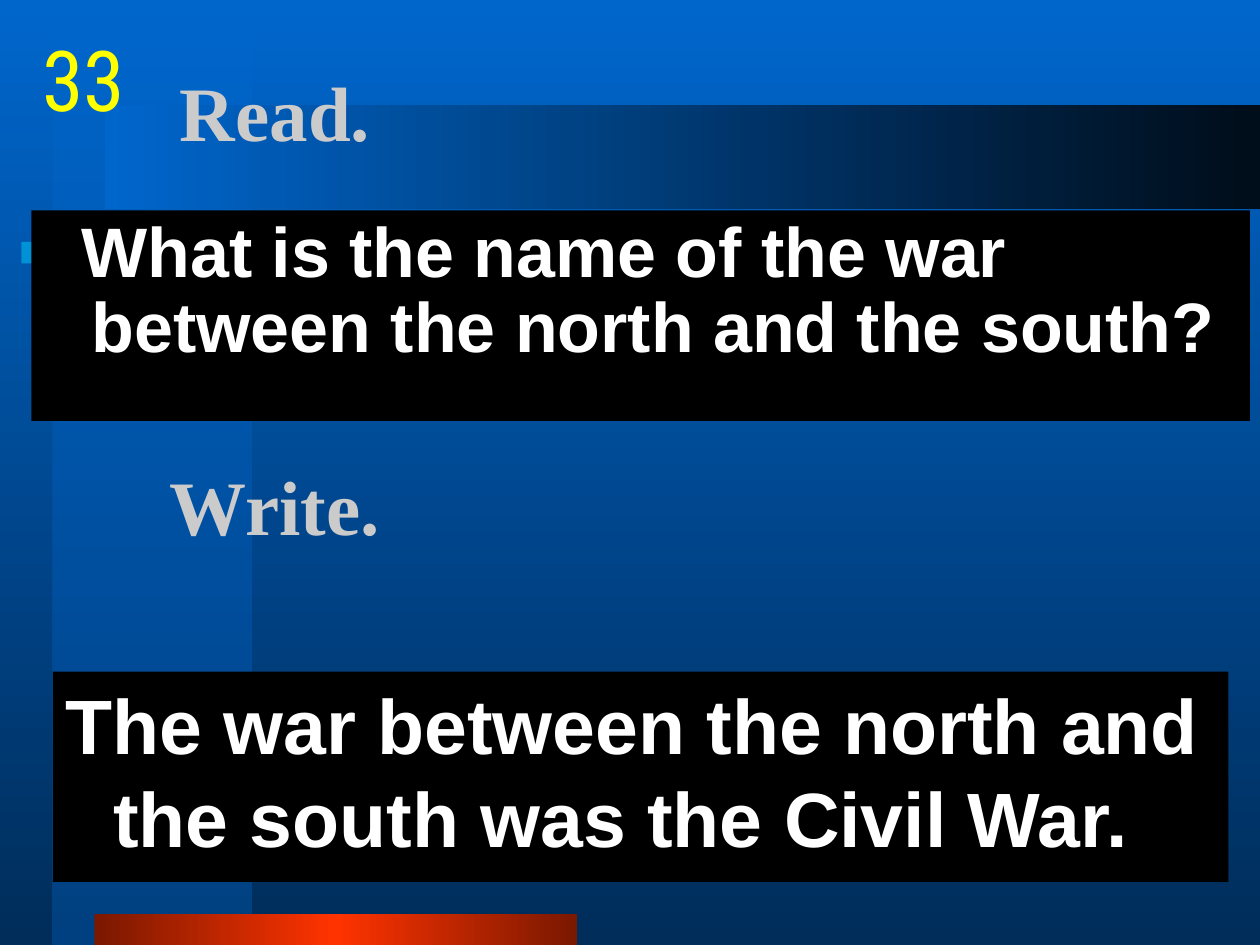
"""Build a read-and-write question slide about the Civil War."""
import pptx
import pptx.dml.color
import pptx.enum.shapes
import pptx.enum.text
import pptx.oxml
import pptx.oxml.ns
import pptx.util

Inches = pptx.util.Inches
Pt = pptx.util.Pt
RGBColor = pptx.dml.color.RGBColor
PP = pptx.enum.text.PP_ALIGN
ANCHOR = pptx.enum.text.MSO_ANCHOR
RECT = pptx.enum.shapes.MSO_SHAPE.RECTANGLE

BLUE = RGBColor(0x00, 0x66, 0xCC)
NAVY = RGBColor(0x00, 0x2D, 0x5A)
MID_BLUE = RGBColor(0x00, 0x53, 0xA6)
NIGHT = RGBColor(0x00, 0x0D, 0x1A)
CYAN = RGBColor(0x00, 0xCC, 0xFF)
RED = RGBColor(0xFF, 0x33, 0x00)
DARK_RED = RGBColor(0x7A, 0x18, 0x00)
BLACK = RGBColor(0x00, 0x00, 0x00)
WHITE = RGBColor(0xFF, 0xFF, 0xFF)
GREY = RGBColor(0xCB, 0xCB, 0xCB)
YELLOW = RGBColor(0xFF, 0xFF, 0x00)


def set_fill(pr, colors, angle=0, alpha=100):
    for tag in ("a:noFill", "a:solidFill", "a:gradFill"):
        for old in pr.findall(pptx.oxml.ns.qn(tag)):
            pr.remove(old)
    clrs = [f'<a:srgbClr val="{c}"><a:alpha val="{alpha * 1000}"/></a:srgbClr>' for c in colors]
    ns = pptx.oxml.ns.nsdecls("a")
    if len(clrs) == 1:
        xml = f"<a:solidFill {ns}>{clrs[0]}</a:solidFill>"
    else:
        step = 100000 // (len(clrs) - 1)
        stops = "".join(f'<a:gs pos="{i * step}">{c}</a:gs>' for i, c in enumerate(clrs))
        xml = (f"<a:gradFill {ns}><a:gsLst>{stops}</a:gsLst>"
               f'<a:lin ang="{angle * 60000}" scaled="0"/></a:gradFill>')
    geom = pr.find(pptx.oxml.ns.qn("a:prstGeom"))
    pr.insert(0 if geom is None else pr.index(geom) + 1, pptx.oxml.parse_xml(xml))


def add_text(box, text, font, size, color, bold=True):
    tb = s.shapes.add_textbox(*map(Inches, box))
    tf = tb.text_frame
    tf.word_wrap = True
    tf.text = text
    f = tf.paragraphs[0].runs[0].font
    f.name, f.size, f.bold = font, Pt(size), bold
    f.color.rgb = color
    return tb


prs = pptx.Presentation()
prs.slide_width, prs.slide_height = Inches(10), Inches(7.5)
s = prs.slides.add_slide(prs.slide_layouts[6])
s.background.fill.solid()
set_fill(s.background._cSld.bg.bgPr, [BLUE, NAVY], 90)

for box, colors, angle, alpha in [
    ((0.42, 0, 1.58, 7.5), [BLUE, MID_BLUE], 90, 50),
    ((0.17, 1.92, 5.17, 0.17), [CYAN], 0, 50),
    ((0.75, 7.25, 3.83, 0.25), [DARK_RED, RED, DARK_RED], 0, 100),
    ((0.83, 0.83, 9.17, 0.83), [BLUE, NIGHT], 0, 100),
]:
    sp = s.shapes.add_shape(RECT, *map(Inches, box))
    sp.shadow.inherit = False
    sp.line.fill.background()
    set_fill(sp._element.spPr, colors, angle, alpha)

for text, box in [
    ("Read.", (1.33, 0.25, 8.5, 1.25)),
    ("Write.", (1.25, 3.17, 8.5, 1.67)),
]:
    tb = add_text(box, text, "Times New Roman", 44, GREY)
    tb.text_frame.vertical_anchor = ANCHOR.MIDDLE

for text, box, size, indent, spacing in [
    ("What is the name of the war between the north and the south?",
     (0.25, 1.67, 9.67, 1.67), 40, -0.08, 0.9),
    ("The war between the north and the south was the Civil War.",
     (0.42, 5.33, 9.33, 1.67), 44, -0.38, 1.0),
]:
    tb = add_text(box, text, "Arial", size, WHITE)
    tb.fill.solid()
    tb.fill.fore_color.rgb = BLACK
    p = tb.text_frame.paragraphs[0]
    p.line_spacing = spacing
    p.space_before = Pt(4)
    pPr = p._p.get_or_add_pPr()
    pPr.set("marL", str(Inches(0.38)))
    pPr.set("indent", str(Inches(indent)))

tb = add_text((0.33, 0.17, 0.67, 0.83), "33", "Roboto Condensed", 48, YELLOW, False)
tf = tb.text_frame
tf.word_wrap = False
tf.margin_left = tf.margin_right = Inches(0)
tf.paragraphs[0].alignment = PP.CENTER

prs.save("out.pptx")
